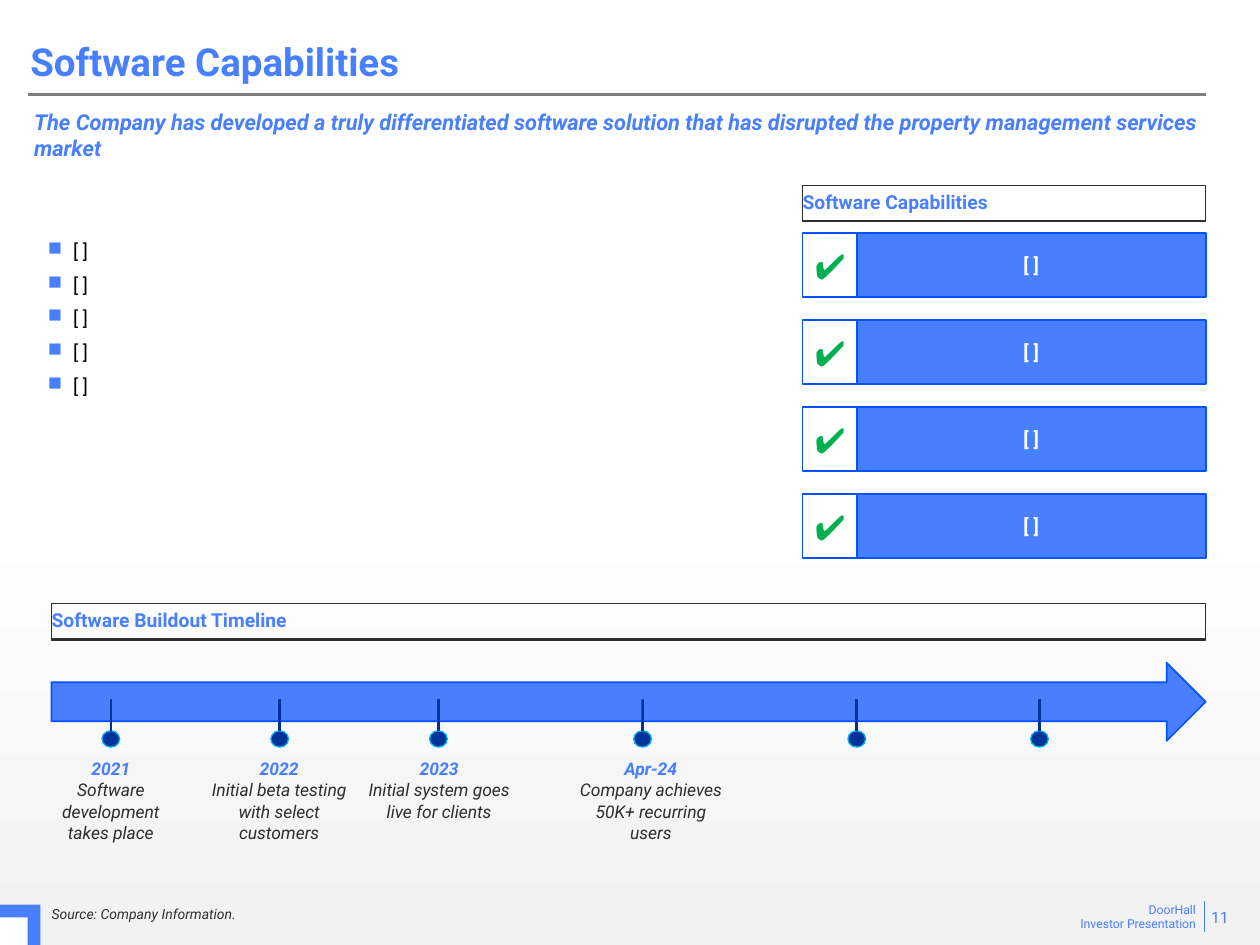
from lxml import etree
from pptx import Presentation
from pptx.dml.color import RGBColor
from pptx.enum.shapes import MSO_CONNECTOR, MSO_SHAPE
from pptx.enum.text import MSO_ANCHOR, PP_ALIGN
from pptx.oxml.ns import qn
from pptx.util import Inches, Pt

RECT, OVAL, ARROW = MSO_SHAPE.RECTANGLE, MSO_SHAPE.OVAL, MSO_SHAPE.RIGHT_ARROW
STRAIGHT = MSO_CONNECTOR.STRAIGHT
TOP, MIDDLE, BOTTOM = MSO_ANCHOR.TOP, MSO_ANCHOR.MIDDLE, MSO_ANCHOR.BOTTOM
LEFT, CENTER, RIGHT, JUSTIFY = PP_ALIGN.LEFT, PP_ALIGN.CENTER, PP_ALIGN.RIGHT, PP_ALIGN.JUSTIFY

BLUE, EDGE, NAVY, CYAN = "487FFE", "0653FE", "003399", "00B0F0"
INK, GRAY, GREEN, WHITE, BLACK = "2D2E2D", "7F7F7F", "00B050", "FFFFFF", "000000"
PADDED, FLUSH = (0.1, 0.05, 0.1, 0.05), (0, 0, 0, 0)

TITLE = "Software Capabilities"
SUBTITLE = ("The Company has developed a truly differentiated software solution "
            "that has disrupted the property management services market")
POINTS = ["[ ]"] * 5
CAPABILITIES = ["[ ]"] * 4
HEADERS = [("Software Capabilities", 6.37, 1.47), ("Software Buildout Timeline", 0.41, 4.79)]
MILESTONES = [
    (0.88, "2021", "Software development takes place", 0.33, 1.1),
    (2.22, "2022", "Initial beta testing with select customers", 1.54, 1.35),
    (3.48, "2023", "Initial system goes live for clients", 2.81, 1.35),
    (5.1, "Apr-24", "Company achieves 50K+ recurring users", 4.49, 1.35),
    (6.8, None, None, None, None),
    (8.25, None, None, None, None),
]
SOURCE = "Source: Company Information."
FOOTER = ["DoorHall", "Investor Presentation"]
PAGE = "11"
RIGHT_EDGE = 9.57


def rgb(value):
    return RGBColor.from_string(value)


def place(part, box):
    for side, length in zip(("left", "top", "width", "height"), box):
        setattr(part, side, Inches(length))


def write(part, lines, size, color, align=LEFT, anchor=TOP, insets=PADDED, name="Roboto",
          **styles):
    frame = part.text_frame
    settings = {"word_wrap": True, "vertical_anchor": anchor}
    for side, inset in zip(("left", "top", "right", "bottom"), insets):
        settings[f"margin_{side}"] = Inches(inset)
    for key, value in settings.items():
        setattr(frame, key, value)
    for index, line in enumerate(lines):
        paragraph = frame.add_paragraph() if index else frame.paragraphs[0]
        paragraph.alignment = align
        run = paragraph.add_run()
        run.text = line
        for key, value in {"name": name, "size": Pt(size), **styles}.items():
            setattr(run.font, key, value)
        run.font.color.rgb = rgb(color)
    return frame.paragraphs


def text(box, lines, size, color, **options):
    label = slide.shapes.add_textbox(*map(Inches, box))
    return write(label, lines, size, color, **options)


def paint(part, fill, line, weight):
    part.shadow.inherit = False
    if fill:
        part.fill.solid()
        part.fill.fore_color.rgb = rgb(fill)
    else:
        part.fill.background()
    if line:
        part.line.color.rgb = rgb(line)
        part.line.width = Pt(weight)
    else:
        part.line.fill.background()


def shape(kind, box, fill=None, line=None, weight=1):
    part = slide.shapes.add_shape(kind, *map(Inches, box))
    paint(part, fill, line, weight)
    return part


def rule(start, end, color, weight):
    line = slide.shapes.add_connector(STRAIGHT, *map(Inches, start + end))
    line.line.color.rgb = rgb(color)
    line.line.width = Pt(weight)
    etree.SubElement(line._element.spPr, qn("a:effectLst"))
    return line


def header(caption, left, top):
    x1, x2 = Inches(left), Inches(RIGHT_EDGE)
    y1, y2, underline = (Inches(top + drop) for drop in (0, 0.29, 0.28))
    outline = slide.shapes.build_freeform(x1, y1)
    outline.add_line_segments([(x2, y1), (x2, y2), (x1, y2)], close=True)
    outline.move_to(x1, underline)
    outline.add_line_segments([(x2, underline)], close=False)
    frame = outline.convert_to_shape()
    paint(frame, None, INK, 0.75)
    write(frame, [caption], 11, BLUE, align=JUSTIFY, anchor=BOTTOM,
          insets=(0, 0, 0, 0.07), bold=True)


def bullet(paragraph):
    props = paragraph._p.get_or_add_pPr()
    props.set("marL", str(Inches(0.21)))
    props.set("indent", str(Inches(-0.2)))
    tint = etree.SubElement(props, qn("a:buClr"))
    etree.SubElement(tint, qn("a:srgbClr"), val=BLUE)
    etree.SubElement(props, qn("a:buChar"), char="■")


prs = Presentation()
prs.slide_width, prs.slide_height = Inches(10), Inches(7.5)
slide = prs.slides.add_slide(prs.slide_layouts[5])

backdrop = slide.background.fill
backdrop.gradient()
backdrop.gradient_angle = 270
for stop, position, color in zip(backdrop.gradient_stops, (0.53, 1), (WHITE, "F2F2F2")):
    stop.position = position
    stop.color.rgb = rgb(color)

text((8.43, 7.11, 1.16, 0.34), FOOTER, 7, BLUE, align=RIGHT)
rule((9.56, 7.15), (9.56, 7.4), BLUE, 0.75)
rule((0.22, 0.75), (RIGHT_EDGE, 0.75), GRAY, 1.5)
shape(RECT, (0, 7.18, 0.32, 0.32), BLUE)
shape(RECT, (0, 7.28, 0.22, 0.22), WHITE)
text((9.1, 7.16, 0.75, 0.24), [PAGE], 9, BLUE, align=RIGHT, anchor=MIDDLE)
text((0.41, 7.18, 7.34, 0.14), [SOURCE], 8, INK, anchor=BOTTOM, insets=FLUSH, italic=True)

place(slide.shapes.title, (0.14, 0.25, 7.88, 0.47))
heading = write(slide.shapes.title, [TITLE], 22, BLUE, anchor=BOTTOM, bold=True)
heading[0].line_spacing = 0.9
text((0.24, 0.86, 9.62, 0.49), [SUBTITLE], 12.5, BLUE, insets=(0.03, 0, 0, 0),
     bold=True, italic=True)

for caption, left, top in HEADERS:
    header(caption, left, top)

for row, capability in enumerate(CAPABILITIES):
    top = 1.85 + 0.69 * row
    bar = shape(RECT, (6.8, top, 2.77, 0.51), BLUE, EDGE)
    write(bar, [capability], 11, WHITE, align=CENTER, anchor=MIDDLE, bold=True)
    check = shape(RECT, (6.37, top, 0.43, 0.51), None, EDGE)
    write(check, ["✔"], 20, GREEN, align=CENTER, anchor=MIDDLE, name="Arial", bold=True)

points = text((0.37, 1.89, 5.48, 1.28), POINTS, 11, BLACK, align=JUSTIFY,
              insets=(0, 0.01, 0, 0))
for index, point in enumerate(points):
    point.space_before = Pt(6 if index else 0)
    bullet(point)

shape(ARROW, (0.41, 5.26, 9.16, 0.62), BLUE, EDGE)
for center, date, event, left, width in MILESTONES:
    dot = shape(OVAL, (center - 0.07, 5.8, 0.14, 0.13), NAVY, CYAN, 0.75)
    rule((center, 5.55), (center, 5.8), NAVY, 1.5).end_connect(dot, 0)
    if date:
        milestone = text((left, 5.97, width, 0.82), [date, event], 10, INK,
                         align=CENTER, italic=True)
        milestone[0].runs[0].font.bold = True
        milestone[0].runs[0].font.color.rgb = rgb(BLUE)

prs.save("out.pptx")
